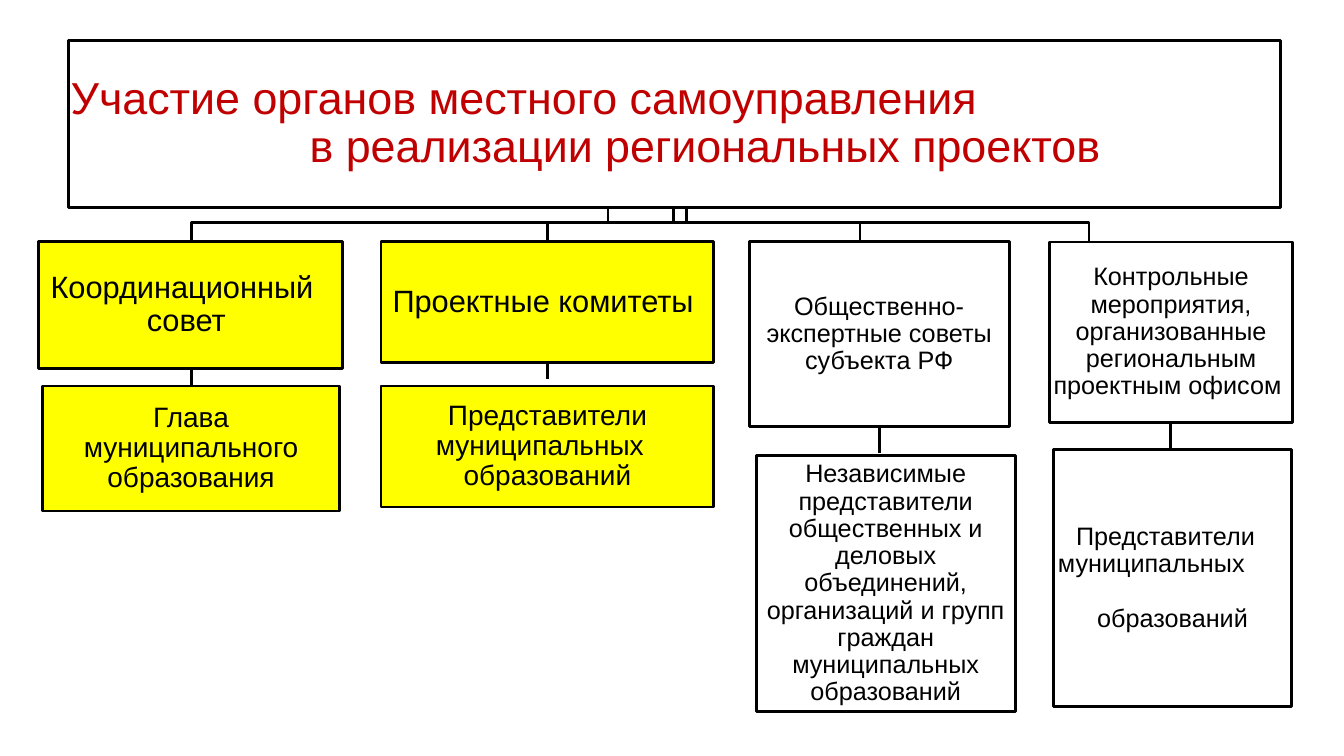
"""Build an organisation chart of local authorities' part in regional projects."""
from lxml import etree
from pptx import Presentation
from pptx.dml.color import RGBColor
from pptx.enum.shapes import MSO_CONNECTOR, MSO_SHAPE
from pptx.enum.text import MSO_ANCHOR, MSO_AUTO_SIZE, PP_ALIGN
from pptx.oxml.ns import qn
from pptx.util import Inches, Pt

RECTANGLE = MSO_SHAPE.RECTANGLE
STRAIGHT = MSO_CONNECTOR.STRAIGHT
CENTER, LEFT = PP_ALIGN.CENTER, PP_ALIGN.LEFT
BLACK, WHITE, YELLOW, RED = "000000", "FFFFFF", "FFFF00", "C00000"
TITLE_BOTTOM, BUS, HEAD_TOP = 2.06, 2.21, 2.4


def color(value):
    """Turn a hex string into a colour."""
    return RGBColor.from_string(value)


def fill_box(box, fill, lines, size, ink=BLACK, align=CENTER, inset=0.01):
    """Style a box and write (text, left indent, right indent, space before) lines."""
    box.shadow.inherit = False
    box.fill.solid()
    box.fill.fore_color.rgb = color(fill)
    box.line.color.rgb = color(BLACK)
    box.line.width = Pt(2)
    frame = box.text_frame
    frame_format = {"word_wrap": True, "auto_size": MSO_AUTO_SIZE.NONE,
                    "vertical_anchor": MSO_ANCHOR.MIDDLE}
    frame_format.update({f"margin_{side}": Inches(inset)
                         for side in ("left", "top", "right", "bottom")})
    for name, value in frame_format.items():
        setattr(frame, name, value)
    for number, (text, left, right, before) in enumerate(lines):
        line = frame.add_paragraph() if number else frame.paragraphs[0]
        line.text = text
        line_format = {"alignment": align, "line_spacing": 0.9, "space_before": Pt(before),
                       "space_after": Pt(6 if number == len(lines) - 1 else 0)}
        for name, value in line_format.items():
            setattr(line, name, value)
        properties = line._p.get_or_add_pPr()
        properties.set("marL", str(Inches(left)))
        properties.set("marR", str(Inches(right)))
        line.font.name = "Arial"
        line.font.size = Pt(size)
        line.font.color.rgb = color(ink)


deck = Presentation()
deck.slide_width, deck.slide_height = Inches(13.33), Inches(7.5)
slide = deck.slides.add_slide(deck.slide_layouts[5])
shapes = slide.shapes

heading = shapes.title
heading.left, heading.top = Inches(0.68), Inches(0.4)
heading.width, heading.height = Inches(12.02), Inches(1.66)
fill_box(heading, WHITE, [("Участие органов местного самоуправления", 0, 0, 0),
                          ("в реализации региональных проектов", 2.37, 0, 0)],
         32, RED, LEFT, 0.02)

branches = [
    {"trunk": 6.03, "drop": 1.9, "stem": (1.9, 3.83), "fill": YELLOW,
     "body": (0.38, 3.02, 1.26), "body_size": 22,
     "body_lines": [("Координационный", 0, 0.17, 0), ("совет ", 0, 0, 0)],
     "members": (0.42, 3.83, 2.95, 1.24), "members_size": 20,
     "members_lines": [("Глава муниципального образования", 0, 0, 0)]},
    {"trunk": 6.81, "drop": 5.43, "stem": (5.43, 3.76), "fill": YELLOW,
     "body": (3.78, 3.3, 1.2), "body_size": 22,
     "body_lines": [("Проектные комитеты ", 0, 0, 0)],
     "members": (3.78, 3.83, 3.3, 1.2), "members_size": 20,
     "members_lines": [("Представители", 0, 0, 0), ("муниципальных", 0, 0.15, 0),
                       ("образований", 0, 0, 0)]},
    {"trunk": 6.68, "drop": 8.53, "stem": (8.72, 4.49), "fill": WHITE,
     "body": (7.43, 2.58, 1.83), "body_size": 18,
     "body_lines": [("Общественно-экспертные советы субъекта РФ", 0, 0, 0)],
     "members": (7.5, 4.52, 2.57, 2.54), "members_size": 18,
     "members_lines": [("Независимые представители общественных и деловых объединений, "
                        "организаций и групп граждан муниципальных образований", 0, 0, 0)]},
    {"trunk": 6.68, "drop": 10.8, "stem": (11.61, 4.46), "fill": WHITE,
     "body": (10.41, 2.41, 1.79), "body_size": 18,
     "body_lines": [("Контрольные мероприятия, организованные региональным "
                     "проектным офисом ", 0, 0, 0)],
     "members": (10.45, 4.46, 2.36, 2.55), "members_size": 18,
     "members_lines": [("Представители", 0, 0.14, 0), ("муниципальных", 0, 0.42, 0),
                       ("образований", 0, 0, 19.4)]},
]

for branch in branches:
    trunk, drop = branch["trunk"], branch["drop"]
    route = shapes.build_freeform(Inches(trunk), Inches(TITLE_BOTTOM))
    route.add_line_segments([(Inches(x), Inches(y)) for x, y in
                             ((trunk, BUS), (drop, BUS), (drop, HEAD_TOP))], close=False)
    elbow = route.convert_to_shape()
    elbow.fill.background()
    elbow.shadow.inherit = False

    left, width, height = branch["body"]
    stem_x, stem_end = branch["stem"]
    stem = shapes.add_connector(STRAIGHT, Inches(stem_x), Inches(HEAD_TOP + height),
                                Inches(stem_x), Inches(stem_end))
    for link in (elbow, stem):
        link.line.color.rgb = color(BLACK)
        link.line.width = Pt(2)
    etree.SubElement(stem._element.spPr, qn("a:effectLst"))

    for part, place in (("body", (left, HEAD_TOP, width, height)),
                        ("members", branch["members"])):
        box = shapes.add_shape(RECTANGLE, *map(Inches, place))
        fill_box(box, branch["fill"], branch[f"{part}_lines"], branch[f"{part}_size"])

deck.save("out.pptx")
